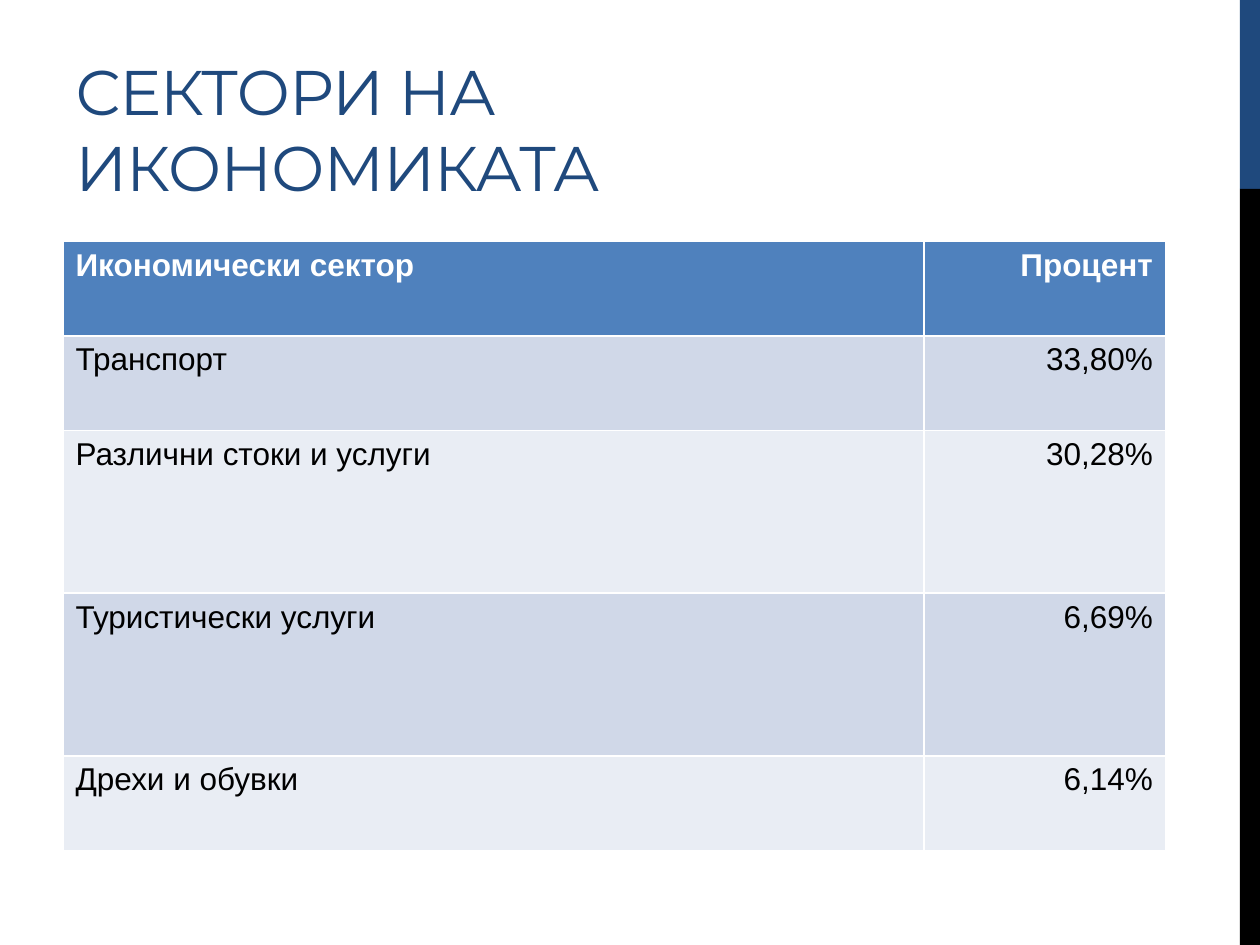
from pptx import Presentation
from pptx.dml.color import RGBColor
from pptx.enum.shapes import MSO_SHAPE as Shape
from pptx.enum.text import MSO_ANCHOR as Anchor, PP_ALIGN as Align
from pptx.util import Pt

NAVY = RGBColor(0x1F, 0x49, 0x7D)
BLACK = RGBColor(0x00, 0x00, 0x00)
WHITE = RGBColor(0xFF, 0xFF, 0xFF)
HEADER_BLUE = RGBColor(0x4F, 0x81, 0xBD)
BANDS = (RGBColor(0xE9, 0xED, 0xF4), RGBColor(0xD0, 0xD8, 0xE8))

SECTORS = [
    ("Икономически сектор", "Процент"),
    ("Транспорт", "33,80%"),
    ("Различни стоки и услуги", "30,28%"),
    ("Туристически услуги", "6,69%"),
    ("Дрехи и обувки", "6,14%"),
]
COLUMN_WIDTHS = (492, 138)
ROW_HEIGHTS = (54, 54, 93, 93, 54)


def write(frame, text, font="Arial", size=18, color=BLACK, bold=False,
          align=Align.LEFT, spacing=None):
    """Put formatted text into a text frame."""
    paragraph = frame.paragraphs[0]
    paragraph.alignment = align
    run = paragraph.add_run()
    run.text = text
    run.font.name = font
    run.font.size = Pt(size)
    run.font.bold = bold
    run.font.color.rgb = color
    if spacing is not None:
        run.font._element.set("spc", str(round(spacing * 100)))


def add_side_bar(slide, top, height, color):
    """Draw one part of the bar along the right edge."""
    bar = slide.shapes.add_shape(
        Shape.RECTANGLE, Pt(708.5), Pt(top), Pt(11.5), Pt(height))
    bar.shadow.inherit = False
    bar.fill.solid()
    bar.fill.fore_color.rgb = color
    bar.line.fill.background()


def add_title(slide, text):
    """Place the title, anchored at the bottom of its box."""
    title = slide.shapes.add_textbox(Pt(36), Pt(12), Pt(456), Pt(108)).text_frame
    title.word_wrap = True
    title.vertical_anchor = Anchor.BOTTOM
    write(title, text, font="Montserrat", size=36, color=NAVY, spacing=-0.6)


def add_sector_table(slide):
    """Build the table of sectors with a header and banded rows."""
    table = slide.shapes.add_table(
        len(SECTORS), len(COLUMN_WIDTHS), Pt(36), Pt(138),
        Pt(sum(COLUMN_WIDTHS)), Pt(sum(ROW_HEIGHTS))).table
    for column, width in zip(table.columns, COLUMN_WIDTHS):
        column.width = Pt(width)
    for row, height in zip(table.rows, ROW_HEIGHTS):
        row.height = Pt(height)
    for row_index, sector in enumerate(SECTORS):
        header = row_index == 0
        for column_index, text in enumerate(sector):
            cell = table.cell(row_index, column_index)
            cell.fill.solid()
            cell.fill.fore_color.rgb = HEADER_BLUE if header else BANDS[row_index % 2]
            write(cell.text_frame, text, bold=header,
                  color=WHITE if header else BLACK,
                  align=Align.RIGHT if column_index else Align.LEFT)


def main():
    """Build and save the slide."""
    deck = Presentation()
    deck.slide_width, deck.slide_height = Pt(720), Pt(540)
    slide = deck.slides.add_slide(deck.slide_layouts[6])
    add_side_bar(slide, 0, 108, NAVY)
    add_side_bar(slide, 108, 432, BLACK)
    add_title(slide, "СЕКТОРИ НА ИКОНОМИКАТА")
    add_sector_table(slide)
    deck.save("out.pptx")


if __name__ == "__main__":
    main()
